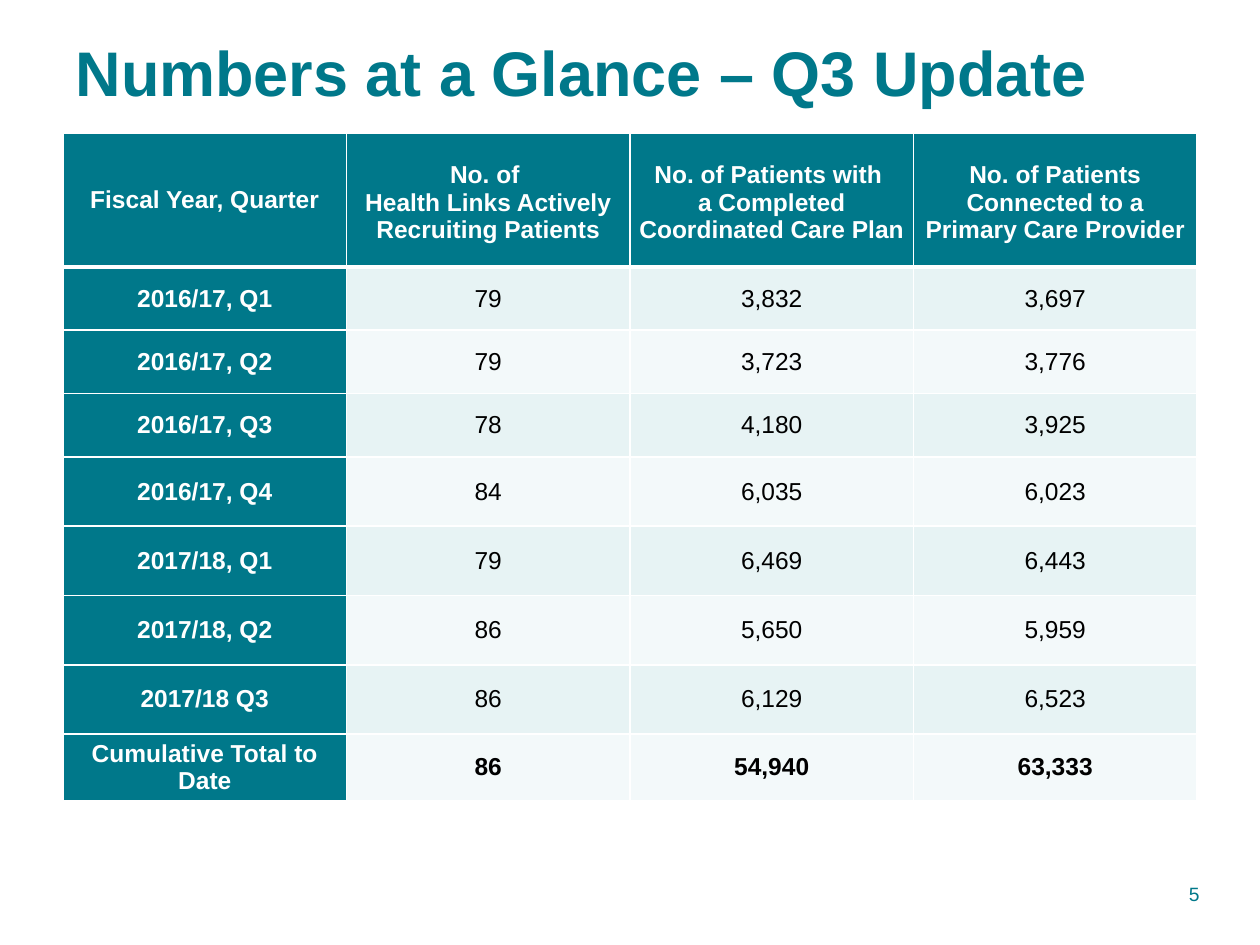
"""Build the quarterly Health Links table slide."""
from dataclasses import dataclass

from lxml.etree import SubElement
from pptx import Presentation
from pptx.dml.color import RGBColor
from pptx.enum.text import MSO_ANCHOR, PP_ALIGN
from pptx.oxml.ns import qn
from pptx.util import Pt


@dataclass(frozen=True)
class Theme:
    font: str = "Arial"
    teal: str = "00788A"
    white: str = "FFFFFF"
    black: str = "000000"
    bands: tuple = ("E7F3F4", "F3F9FA")
    title_size: int = 36
    table_size: int = 14
    number_size: int = 11


theme = Theme()


def add_text(paragraph, text, size, color, bold=False):
    run = paragraph.add_run()
    run.text = text
    run.font.name = theme.font
    run.font.size = Pt(size)
    run.font.bold = bold
    run.font.color.rgb = RGBColor.from_string(color)


def add_borders(cell, bottom_width):
    properties = cell._tc.get_or_add_tcPr()
    for side, width in (("L", 1), ("R", 1), ("T", 1), ("B", bottom_width)):
        border = SubElement(properties, qn(f"a:ln{side}"), w=str(Pt(width)))
        border_fill = SubElement(border, qn("a:solidFill"))
        SubElement(border_fill, qn("a:srgbClr"), val=theme.white)


headings = [
    ["Fiscal Year, Quarter"],
    ["No. of ", "Health Links Actively Recruiting Patients"],
    ["No. of Patients with ", "a Completed Coordinated Care Plan"],
    ["No. of Patients Connected to a", "Primary Care Provider "],
]
quarters = [
    ("2016/17, Q1", "79", "3,832", "3,697"),
    ("2016/17, Q2", "79", "3,723", "3,776"),
    ("2016/17, Q3", "78", "4,180", "3,925"),
    ("2016/17, Q4", "84", "6,035", "6,023"),
    ("2017/18, Q1", "79", "6,469", "6,443"),
    ("2017/18, Q2", "86", "5,650", "5,959"),
    ("2017/18 Q3", "86", "6,129", "6,523"),
    ("Cumulative Total to Date", "86", "54,940", "63,333"),
]
rows = [headings] + [[[value] for value in quarter] for quarter in quarters]
row_heights = [76.2] + [36.2] * 3 + [39.6] * 4 + [38]
last_row = len(rows) - 1

presentation = Presentation()
presentation.slide_width, presentation.slide_height = Pt(720), Pt(540)
slide = presentation.slides.add_slide(presentation.slide_layouts[5])

title = slide.shapes.title
title.left, title.top, title.width, title.height = Pt(36), Pt(23), Pt(660), Pt(41)
title.text_frame.vertical_anchor = MSO_ANCHOR.MIDDLE
heading = title.text_frame.paragraphs[0]
heading.alignment = PP_ALIGN.LEFT
heading.line_spacing = Pt(37.2)
add_text(heading, "Numbers at a Glance – Q3 Update", theme.title_size, theme.teal, True)

table = slide.shapes.add_table(
    len(rows), len(headings), Pt(36), Pt(76.3), Pt(648), Pt(sum(row_heights))
).table
for column in table.columns:
    column.width = Pt(162)

for row_index, (row, height) in enumerate(zip(rows, row_heights)):
    table.rows[row_index].height = Pt(height)
    is_header = row_index == 0
    for column_index, lines in enumerate(row):
        cell = table.cell(row_index, column_index)
        is_label = is_header or column_index == 0
        hangs_from_top = is_header and column_index > 0
        add_borders(cell, 3 if is_header else 1)
        cell.fill.solid()
        cell.fill.fore_color.rgb = RGBColor.from_string(
            theme.teal if is_label else theme.bands[(row_index - 1) % 2]
        )
        cell.margin_left = cell.margin_right = Pt(5)
        cell.margin_top = Pt(16 if hangs_from_top else 0)
        cell.margin_bottom = Pt(0)
        cell.vertical_anchor = MSO_ANCHOR.TOP if hangs_from_top else MSO_ANCHOR.MIDDLE
        for line_index, line in enumerate(lines):
            frame = cell.text_frame
            paragraph = frame.add_paragraph() if line_index else frame.paragraphs[0]
            paragraph.alignment = PP_ALIGN.CENTER
            add_text(
                paragraph,
                line,
                theme.table_size,
                theme.white if is_label else theme.black,
                is_label or row_index == last_row,
            )

page_number = slide.shapes.add_textbox(Pt(608.4), Pt(500.4), Pt(84.2), Pt(20.9))
page_number.text_frame.word_wrap = True
number_line = page_number.text_frame.paragraphs[0]
number_line.alignment = PP_ALIGN.RIGHT
add_text(number_line, "5", theme.number_size, theme.teal)

presentation.save("out.pptx")
